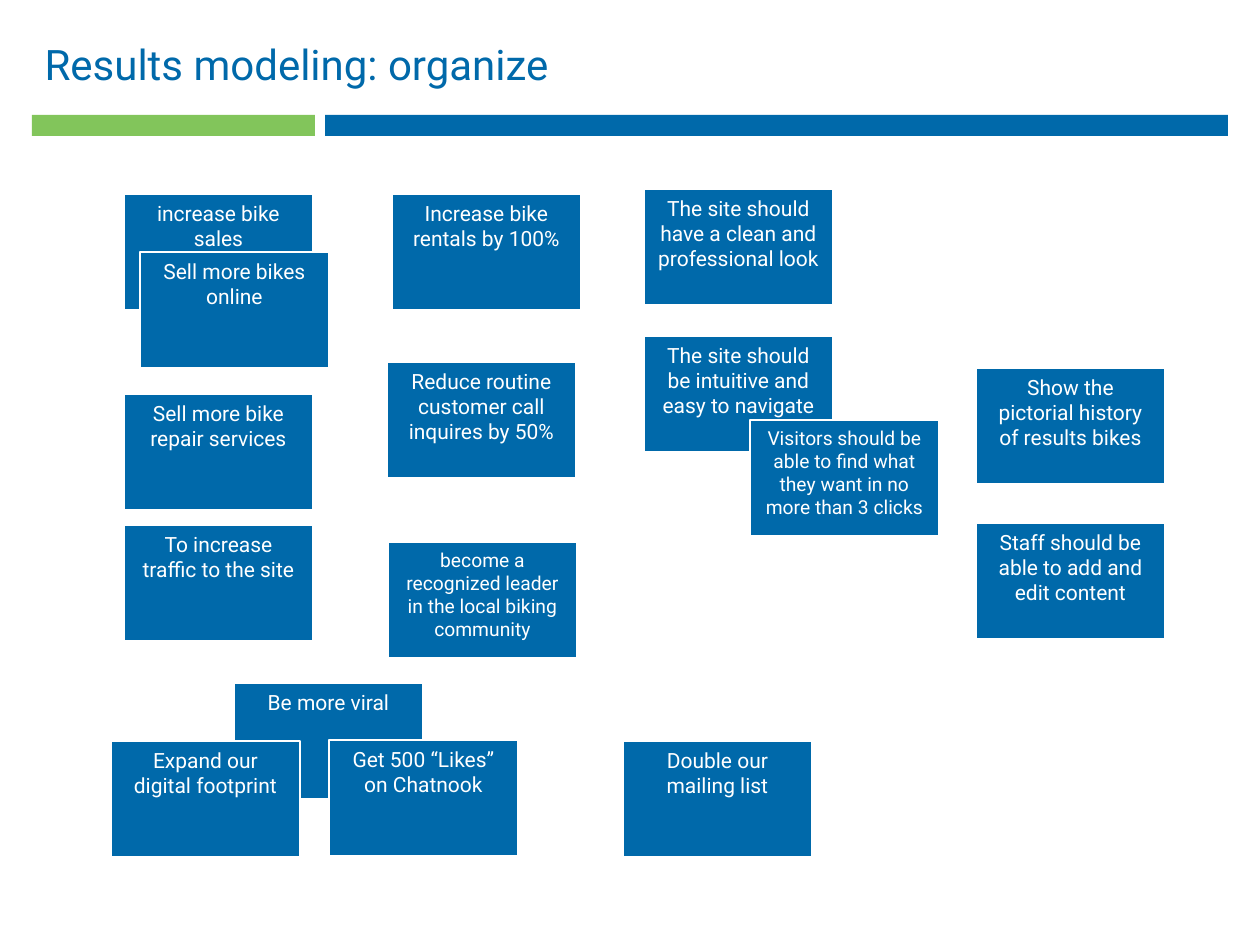
"""Build the slide that organizes goal cards into groups."""
from dataclasses import dataclass

from pptx import Presentation
from pptx.dml.color import RGBColor
from pptx.enum.shapes import MSO_SHAPE
from pptx.enum.text import MSO_ANCHOR, PP_ALIGN
from pptx.shapes.autoshape import Shape
from pptx.slide import Slide
from pptx.util import Emu, Pt

BLUE = RGBColor(0x00, 0x69, 0xAA)
GREEN = RGBColor(0x82, 0xC5, 0x5B)
WHITE = RGBColor(0xFF, 0xFF, 0xFF)
FONT = "Roboto"
EMU_PER_PX = 914400 / 126
CARD_WIDTH, CARD_HEIGHT = 189, 116
TITLE_ONLY = 5


@dataclass(frozen=True)
class Bar:
    left: int
    width: int
    color: RGBColor


@dataclass(frozen=True)
class Card:
    left: int
    top: int
    text: str
    size: int = 12


BARS = [Bar(325, 903, BLUE), Bar(32, 283, GREEN)]

CARDS = [
    Card(124, 194, "increase bike sales"),
    Card(388, 542, "become a recognized leader in the local biking community", 11),
    Card(976, 368, "Show the pictorial history of results bikes"),
    Card(644, 336, "The site should be intuitive and easy to navigate"),
    Card(644, 189, "The site should have a clean and professional look"),
    Card(234, 683, "Be more viral"),
    Card(124, 525, "To increase traffic to the site"),
    Card(392, 194, "Increase bike rentals by 100%"),
    Card(387, 362, "Reduce routine customer call inquires by 50%"),
    Card(124, 394, "Sell more bike repair services"),
    Card(140, 252, "Sell more bikes online"),
    Card(623, 741, "Double our mailing list"),
    Card(976, 523, "Staff should be able to add and edit content"),
    Card(111, 741, "Expand our digital footprint"),
    Card(329, 740, "Get 500 “Likes” on Chatnook"),
    Card(750, 420, "Visitors should be able to find what they want in no more than 3 clicks", 11),
]


def px(length: int) -> Emu:
    """Turn pixels into EMU."""
    return Emu(round(length * EMU_PER_PX))


def set_attributes(target: object, values: dict) -> None:
    """Set each named attribute on the target."""
    for name, value in values.items():
        setattr(target, name, value)


def write_text(shape: Shape, text: str, size: int, color: RGBColor, alignment: PP_ALIGN) -> None:
    """Write one formatted paragraph at the top of the shape."""
    frame = shape.text_frame
    set_attributes(frame, {"text": text, "word_wrap": True, "vertical_anchor": MSO_ANCHOR.TOP})
    paragraph = frame.paragraphs[0]
    paragraph.alignment = alignment
    font = paragraph.runs[0].font
    set_attributes(font, {"name": FONT, "size": Pt(size)})
    font.color.rgb = color


def add_rectangle(slide: Slide, left: int, top: int, width: int, height: int, color: RGBColor) -> Shape:
    """Add a flat filled rectangle without an outline."""
    shape = slide.shapes.add_shape(MSO_SHAPE.RECTANGLE, px(left), px(top), px(width), px(height))
    shape.shadow.inherit = False
    shape.fill.solid()
    shape.fill.fore_color.rgb = color
    shape.line.fill.background()
    return shape


def add_card(slide: Slide, card: Card) -> None:
    """Add a white-edged goal card."""
    shape = add_rectangle(slide, card.left, card.top, CARD_WIDTH, CARD_HEIGHT, BLUE)
    shape.line.color.rgb = WHITE
    shape.line.width = Pt(1)
    write_text(shape, card.text, card.size, WHITE, PP_ALIGN.CENTER)


def main() -> None:
    """Build and save the slide."""
    presentation = Presentation()
    set_attributes(presentation, {"slide_width": px(1260), "slide_height": px(945)})
    slide = presentation.slides.add_slide(presentation.slide_layouts[TITLE_ONLY])
    title = slide.shapes.title
    set_attributes(title, {"left": px(32), "top": px(32), "width": px(1134), "height": px(63)})
    write_text(title, "Results modeling: organize", 24, BLUE, PP_ALIGN.LEFT)
    for bar in BARS:
        add_rectangle(slide, bar.left, 115, bar.width, 21, bar.color)
    for card in CARDS:
        add_card(slide, card)
    presentation.save("out.pptx")


if __name__ == "__main__":
    main()
